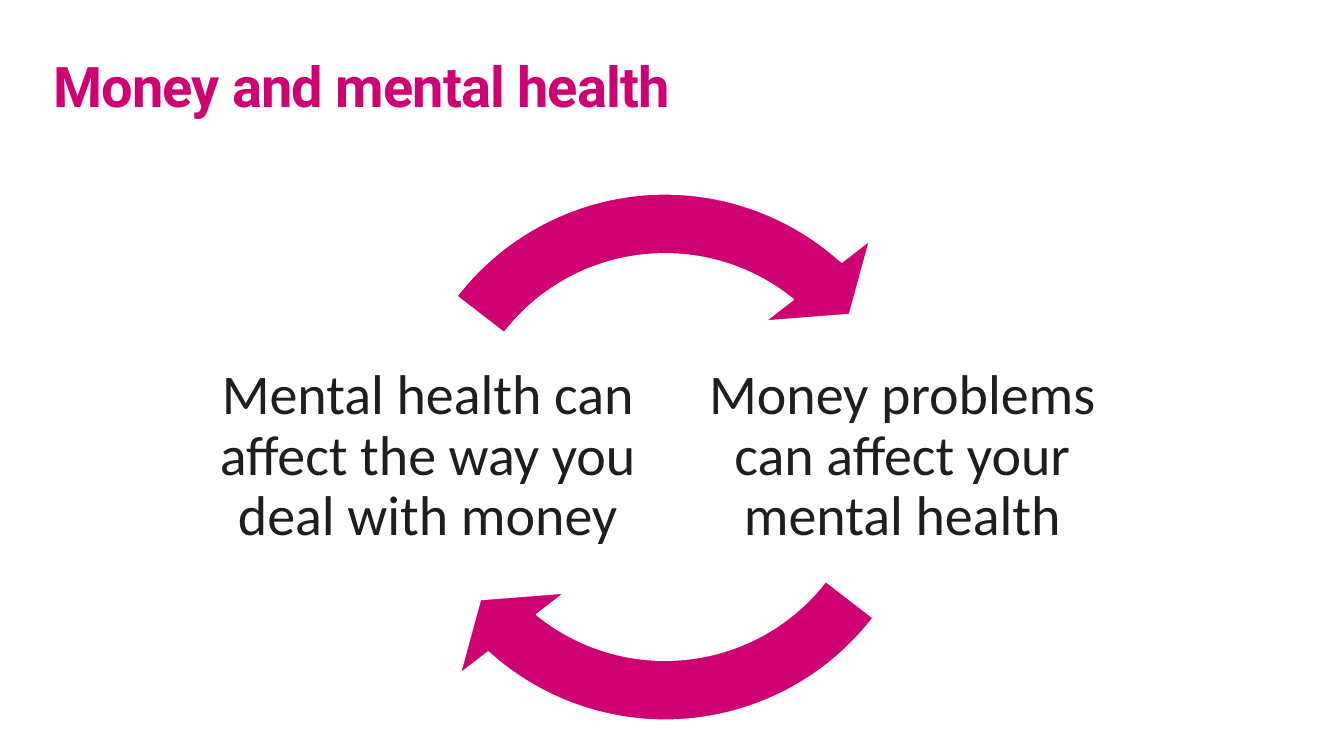
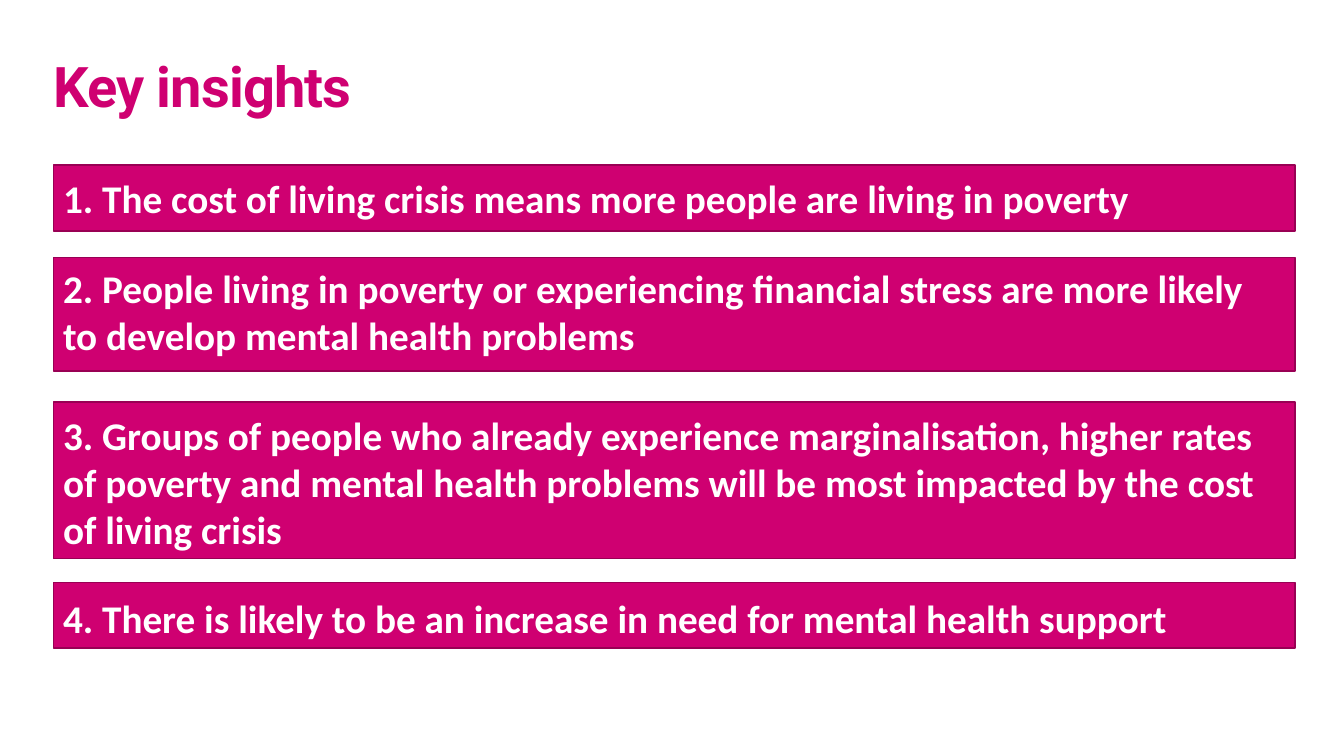
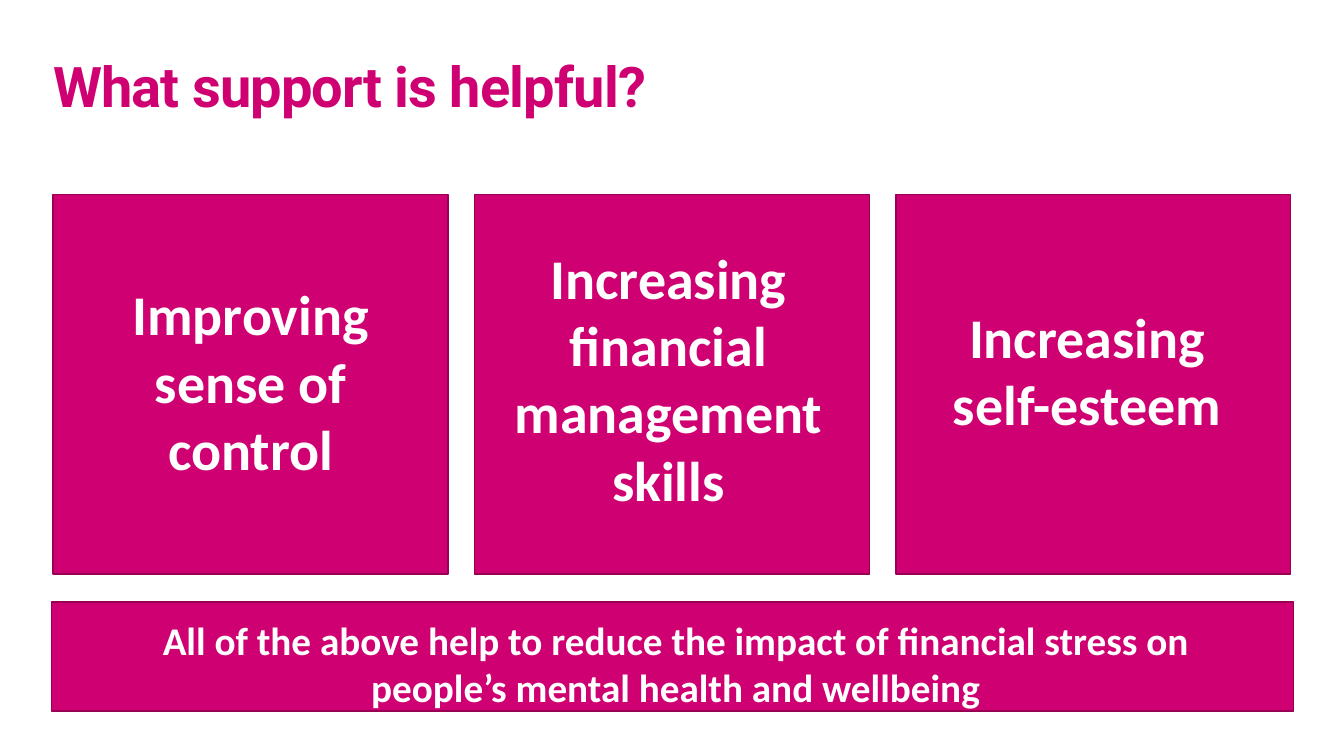
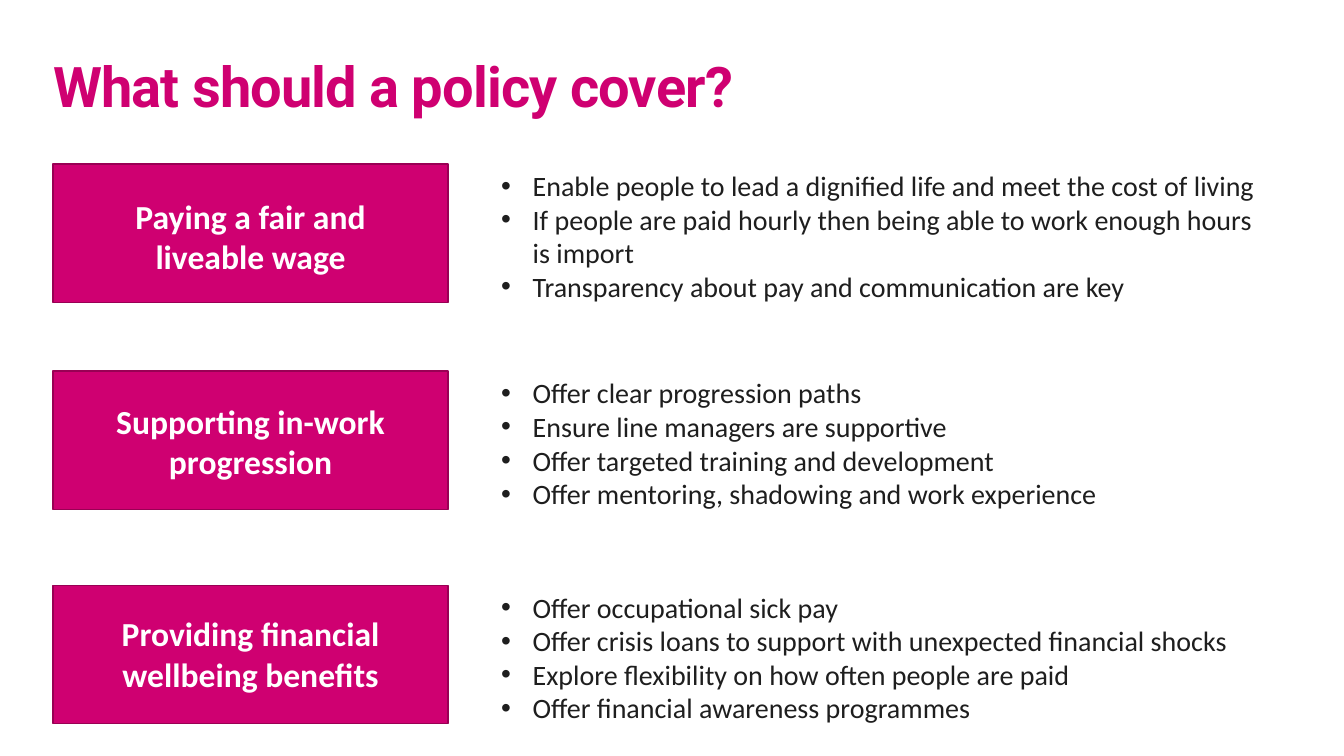
from lxml.etree import SubElement as Sub
from pptx import Presentation as Deck
from pptx.dml.color import RGBColor as RGB
from pptx.enum.shapes import MSO_SHAPE as Form
from pptx.enum.text import MSO_ANCHOR as Anchor, MSO_AUTO_SIZE as Fit, PP_ALIGN as Align
from pptx.oxml.ns import qn
from pptx.util import Pt

PINK = RGB(0xCF, 0x00, 0x71)
PLUM = RGB(0x99, 0x00, 0x54)
INK = RGB(0x1E, 0x1E, 0x1E)
WHITE = RGB(0xFF, 0xFF, 0xFF)
HEAD = "Roboto"
BODY = "Calibri"
LEFT = 38
FULL = 887
CARD = 282
STEP = 301

BARS = [
    (118, 47, 6.5, "1. The cost of living crisis means more people are living in poverty"),
    (184, 81, 4.5, "2. People living in poverty or experiencing financial stress are more likely "
     "to develop mental health problems"),
    (287, 112, 6.5, "3. Groups of people who already experience marginalisation, higher rates of "
     "poverty and mental health problems will be most impacted by the cost of living crisis"),
    (416, 47, 8.5, "4. There is likely to be an increase in need for mental health support"),
]
CARDS = [
    ((22, 61, 22), ["Improving sense of control"]),
    ((7, 35, 12), ["Increasing financial management skills"]),
    ((8, 77, 17), ["Increasing", "self-esteem"]),
]
ROWS = [
    (117, 23, "Paying a fair and liveable wage", [
        "Enable people to lead a dignified life and meet the cost of living",
        "If people are paid hourly then being able to work enough hours is import",
        "Transparency about pay and communication are key",
    ]),
    (265, 21, "Supporting in-work progression", [
        "Offer clear progression paths",
        "Ensure line managers are supportive",
        "Offer targeted training and development",
        "Offer mentoring, shadowing and work experience",
    ]),
    (418, 20, "Providing financial wellbeing benefits", [
        "Offer occupational sick pay",
        "Offer crisis loans to support with unexpected financial shocks",
        "Explore flexibility on how often people are paid",
        "Offer financial awareness programmes",
    ]),
]


def place(shape, x, y, w, h):
    shape.left, shape.top, shape.width, shape.height = Pt(x), Pt(y), Pt(w), Pt(h)


def setup(frame, pads, anchor=Anchor.TOP):
    frame.word_wrap = True
    frame.auto_size = Fit.NONE
    frame.vertical_anchor = anchor
    (frame.margin_left, frame.margin_top,
     frame.margin_right, frame.margin_bottom) = [Pt(pad) for pad in pads]


def style(para, size, color, bold=False, face=BODY, align=Align.LEFT):
    para.alignment = align
    font = para.font
    font.name, font.size, font.bold = face, Pt(size), bold
    font.color.rgb = color


def write(frame, lines, size, color, bold=False, align=Align.LEFT, dots=False):
    for i, line in enumerate(lines):
        para = frame.add_paragraph() if i else frame.paragraphs[0]
        para.text = line
        if dots:
            bullet(para)
        style(para, size, color, bold, align=align)


def bullet(para):
    props = para._p.get_or_add_pPr()
    props.set("marL", str(Pt(22.5)))
    props.set("indent", str(-Pt(22.5)))
    Sub(props, qn("a:buFont")).set("typeface", "Arial")
    Sub(props, qn("a:buChar")).set("char", "•")


def paint(shape, line):
    shape.shadow.inherit = False
    shape.fill.solid()
    shape.fill.fore_color.rgb = PINK
    shape.line.color.rgb = line
    shape.line.width = Pt(1)


def start(deck, text):
    slide = deck.slides.add_slide(deck.slide_layouts[5])
    title = slide.shapes.title
    place(title, LEFT, 37.5, 698, 80)
    setup(title.text_frame, (0, 8.5, 0, 0))
    para = title.text_frame.paragraphs[0]
    para.text = text
    para.line_spacing = 0.8
    style(para, 40, PINK, True, HEAD)
    para.runs[0]._r.get_or_add_rPr().set("spc", "-60")
    return slide


def panel(slide, area, pads, lines, size, align=Align.CENTER):
    shape = slide.shapes.add_shape(Form.RECTANGLE, *[Pt(v) for v in area])
    paint(shape, PLUM)
    setup(shape.text_frame, (*pads, 0))
    write(shape.text_frame, lines, size, WHITE, True, align)


def label(slide, area, pads, lines, size, **look):
    box = slide.shapes.add_textbox(*[Pt(v) for v in area])
    anchor = look.pop("anchor", Anchor.TOP)
    setup(box.text_frame, pads, anchor)
    write(box.text_frame, lines, size, INK, **look)
    return box.text_frame


def arrow(slide, turn):
    shape = slide.shapes.add_shape(Form.CIRCULAR_ARROW, Pt(261.5), Pt(113), Pt(427), Pt(427))
    paint(shape, WHITE)
    for i, value in enumerate((0.1, 6.84, 78.54 + turn, 22.62 + turn, 0.11)):
        shape.adjustments[i] = value


def cycle(deck):
    slide = start(deck, "Money and mental health")
    for x, w, turn, text in (
        (474.5, 340, 0, "Money problems can affect your mental health"),
        (145.5, 320, 108, "Mental health can affect the way you deal with money"),
    ):
        frame = label(slide, (x, 223, w, 207), (4, 4, 4, 4), [text], 40,
                      align=Align.CENTER, anchor=Anchor.MIDDLE)
        frame.paragraphs[0].line_spacing = 0.9
        arrow(slide, turn)


def insights(deck):
    slide = start(deck, "Key insights")
    for y, h, pad, text in BARS:
        panel(slide, (LEFT, y, FULL, h), (7, pad, 22), [text], 28, Align.LEFT)


def support(deck):
    slide = start(deck, "What support is helpful?")
    for i, (pads, lines) in enumerate(CARDS):
        panel(slide, (LEFT + i * STEP, 139, CARD, 271), pads, lines, 40)
    panel(slide, (37, 430, FULL, 78), (32, 10, 28),
          ["All of the above help to reduce the impact of financial stress on "
           "people’s mental health and wellbeing"], 28)


def policy(deck):
    slide = start(deck, "What should a policy cover?")
    for y, pad, head, lines in ROWS:
        panel(slide, (LEFT, y, CARD, 99), (22, pad, 22), [head], 24)
        label(slide, (351, y, 559, 104), (7, 3.5, 7, 3.5), lines, 20, dots=True)


def main():
    deck = Deck()
    deck.slide_width, deck.slide_height = Pt(960), Pt(540)
    for build in (cycle, insights, support, policy):
        build(deck)
    deck.save("out.pptx")


if __name__ == "__main__":
    main()
